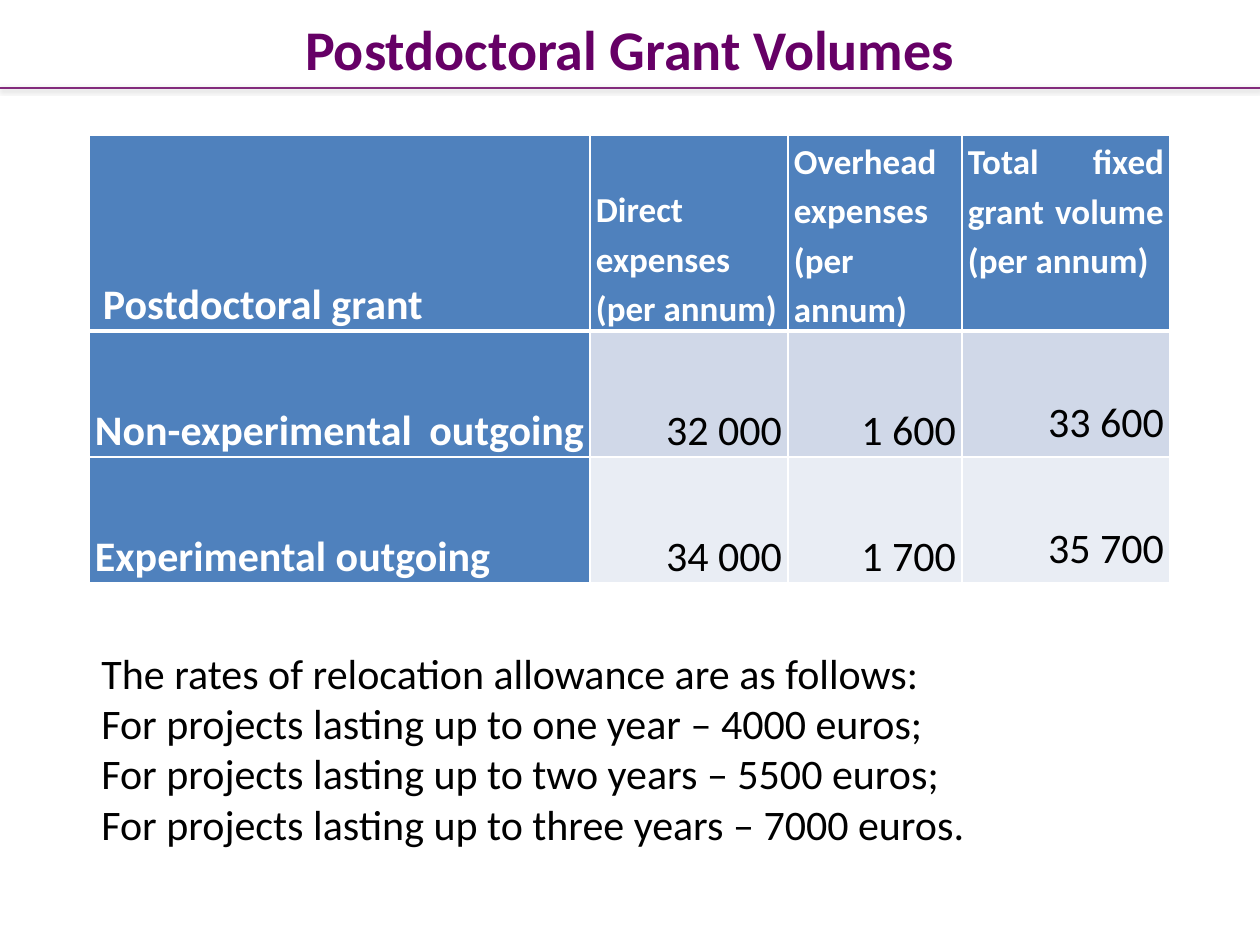
from lxml import etree
from pptx import Presentation
from pptx import util as u
from pptx.dml.color import RGBColor
from pptx.enum import shapes, text
from pptx.oxml import ns

PX = u.Inches(1) // 126
LEFT, CENTER, RIGHT, JUSTIFY = (
    text.PP_ALIGN.LEFT, text.PP_ALIGN.CENTER, text.PP_ALIGN.RIGHT, text.PP_ALIGN.JUSTIFY)
BLUE, WHITE, BLACK = "4F81BD", "FFFFFF", "000000"


def color(value):
    return RGBColor.from_string(value)


def write(paragraph, words, hue, align, **font_format):
    paragraph.alignment = align
    run = paragraph.add_run()
    run.text = words
    for key, value in {"name": "Calibri", "size": u.Pt(24), "bold": False, **font_format}.items():
        setattr(run.font, key, value)
    run.font.color.rgb = color(hue)


deck = Presentation()
deck.slide_width, deck.slide_height = 1260 * PX, 945 * PX
slide = deck.slides.add_slide(deck.slide_layouts[6])

rule = slide.shapes.add_connector(shapes.MSO_CONNECTOR.STRAIGHT, 0, 88 * PX, 1260 * PX, 88 * PX)
rule.line.color.rgb = color("832B7C")
rule.line.width = u.Pt(1)
effects = etree.SubElement(rule._element.spPr, ns.qn("a:effectLst"))
shadow = etree.SubElement(effects, ns.qn("a:outerShdw"), blurRad="39400", dist="12700",
                          dir="5400000", rotWithShape="0")
shade = etree.SubElement(shadow, ns.qn("a:srgbClr"), val=BLACK)
etree.SubElement(shade, ns.qn("a:alpha"), val="25000")

title = slide.shapes.add_textbox(63 * PX, 0, 1134 * PX, 96 * PX).text_frame
title.word_wrap = True
title.vertical_anchor = text.MSO_ANCHOR.MIDDLE
write(title.paragraphs[0], "Postdoctoral Grant Volumes", "660066", CENTER, size=u.Pt(32), bold=True)

column_widths = [501, 198, 174, 208]
row_heights = [196, 126, 126]
row_fills = [BLUE, "D0D8E8", "E9EDF4"]
grants = [
    ["Postdoctoral grant", "Direct expenses (per annum)", "Overhead expenses (per annum)",
     "Total fixed grant volume (per annum)"],
    ["Non-experimental outgoing ", "32 000", "1 600", "33 600"],
    ["Experimental outgoing", "34 000", "1 700", "35 700"],
]
grant_table = slide.shapes.add_table(
    3, 4, 89 * PX, 135 * PX, sum(column_widths) * PX, sum(row_heights) * PX).table
for column, width in zip(grant_table.columns, column_widths):
    column.width = width * PX
for row, height in zip(grant_table.rows, row_heights):
    row.height = height * PX

for r, labels in enumerate(grants):
    for c, label in enumerate(labels):
        cell = grant_table.cell(r, c)
        heading = r == 0 or c == 0
        total = c == 3
        cell_format = {
            "margin_left": (14 if r == c == 0 else 6) * PX,
            "margin_right": 6 * PX,
            "margin_top": (59 if total and r else 0) * PX,
            "margin_bottom": 0,
            "vertical_anchor": text.MSO_ANCHOR.TOP if total else text.MSO_ANCHOR.BOTTOM,
        }
        for key, value in cell_format.items():
            setattr(cell, key, value)
        borders = {"lnL": 1, "lnR": 1, "lnT": 3 if r == 1 else 1, "lnB": 3 if r == 0 else 1}
        for side, points in borders.items():
            border = etree.SubElement(cell._tc.get_or_add_tcPr(), ns.qn("a:" + side),
                                      w=str(u.Pt(points)))
            paint = etree.SubElement(border, ns.qn("a:solidFill"))
            etree.SubElement(paint, ns.qn("a:srgbClr"), val=WHITE)
        cell.fill.solid()
        cell.fill.fore_color.rgb = color(BLUE if heading else row_fills[r])
        paragraph = cell.text_frame.paragraphs[0]
        paragraph.line_spacing = 1.15
        write(paragraph, label, WHITE if heading else BLACK, JUSTIFY if heading else RIGHT,
              size=u.Pt(20 if r == 0 and c else 24), bold=heading)

allowance = slide.shapes.add_textbox(89 * PX, 641 * PX, 1081 * PX, 217 * PX).text_frame
allowance.word_wrap = True
rates = [
    "The rates of relocation allowance are as follows:",
    "For projects lasting up to one year – 4000 euros;",
    "For projects lasting up to two years – 5500 euros;",
    "For projects lasting up to three years – 7000 euros.",
]
for i, rate in enumerate(rates):
    write(allowance.add_paragraph() if i else allowance.paragraphs[0], rate, BLACK, LEFT)

deck.save("out.pptx")
